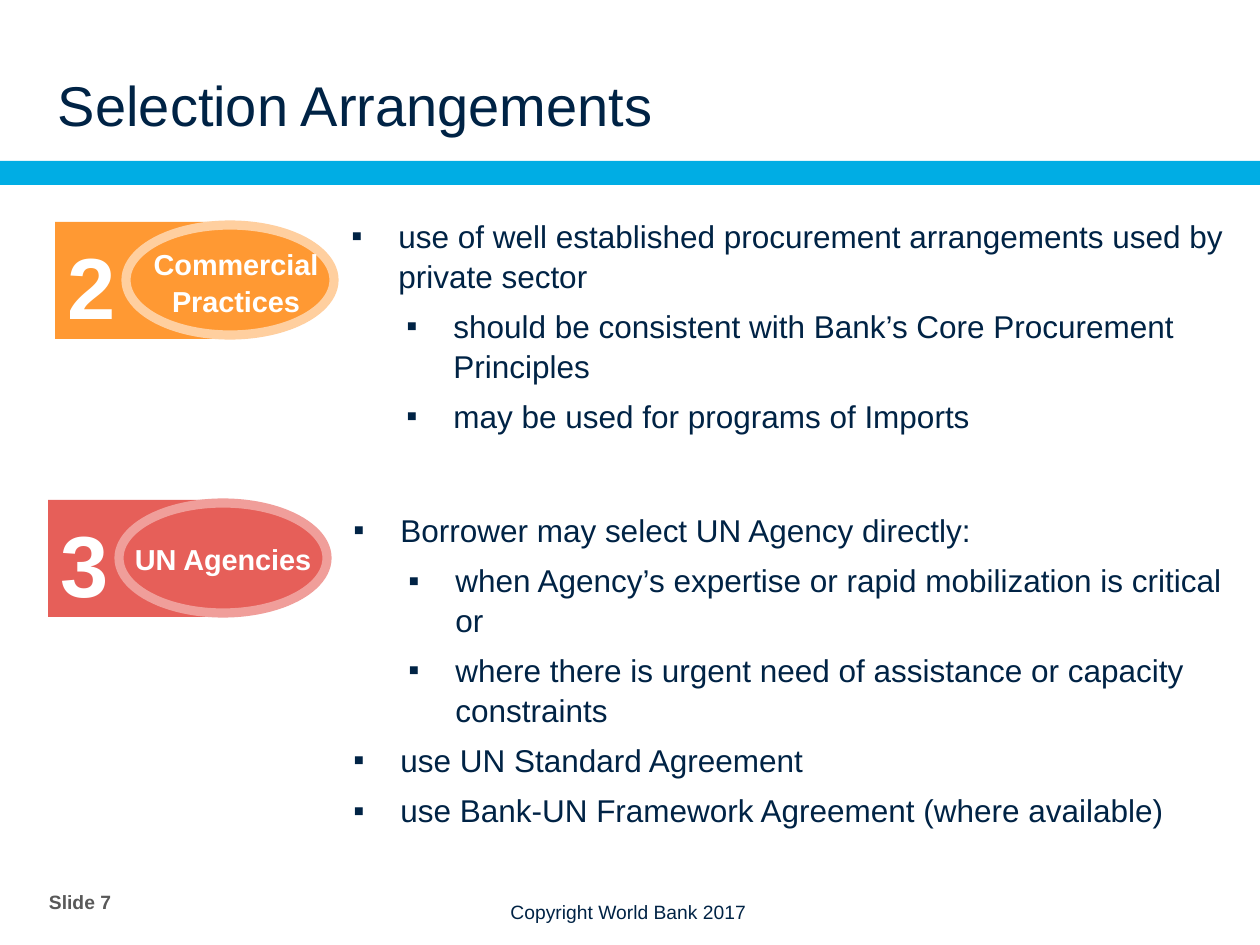
from pptx import Presentation
from pptx.dml.color import RGBColor
from pptx.enum.shapes import MSO_SHAPE as SHAPE
from pptx.enum.text import MSO_ANCHOR as ANCHOR, PP_ALIGN as ALIGN
from pptx.oxml.ns import qn
from pptx.util import Emu, Pt
from lxml import etree

SCALE = 914400 / 126
FONT = "Arial"
NAVY, CYAN, GREY, WHITE = "002345", "00ADE4", "595959", "FFFFFF"
ORANGE, PEACH, RED, PINK = "FF9933", "FFCF9F", "E65F59", "F09E9A"


def px(n):
    return Emu(round(n * SCALE))


def color(value):
    return RGBColor.from_string(value)


def add_run(p, text, size, fill, bold=False):
    p.line_spacing = 1.05
    r = p.add_run()
    r.text = text
    r.font.name, r.font.size, r.font.bold = FONT, Pt(size), bold
    r.font.color.rgb = color(fill)


def add_block(s, kind, box, fill, line=None, width=0):
    sp = s.shapes.add_shape(kind, *map(px, box))
    sp.shadow.inherit = False
    sp.fill.solid()
    sp.fill.fore_color.rgb = color(fill)
    if line:
        sp.line.color.rgb = color(line)
        sp.line.width = Pt(width)
    else:
        sp.line.fill.background()
    return sp


def add_text(s, box, lines, size, fill, bold=False, align=ALIGN.LEFT,
             anchor=ANCHOR.TOP, inset=True, wrap=True):
    tf = s.shapes.add_textbox(*map(px, box)).text_frame
    tf.word_wrap = wrap
    tf.vertical_anchor = anchor
    if not inset:
        tf.margin_left = tf.margin_right = tf.margin_top = tf.margin_bottom = 0
    for i, text in enumerate(lines):
        p = tf.add_paragraph() if i else tf.paragraphs[0]
        p.alignment = align
        add_run(p, text, size, fill, bold)


def add_badge(s, x, y, number, lines, fill, ring, label_dx):
    w, h = 180, 117
    # Number block
    sp = add_block(s, SHAPE.RECTANGLE, (x, y, w, h), fill)
    tf = sp.text_frame
    tf.vertical_anchor = ANCHOR.TOP
    p = tf.paragraphs[0]
    p.alignment = ALIGN.LEFT
    add_run(p, number, 49.5, WHITE, True)
    # Ringed oval and its label
    add_block(s, SHAPE.OVAL, (x + 71, y + 3, 208, 110), fill, ring, 5.25)
    label_h = 13 + 35 * len(lines)
    add_text(s, (x + label_dx, y + (h - label_h) // 2, 220, label_h), lines,
             16.5, WHITE, True, ALIGN.CENTER)


def add_bullets(s, box, items):
    tf = s.shapes.add_textbox(*map(px, box)).text_frame
    tf.word_wrap = True
    for i, (level, text) in enumerate(items):
        p = tf.add_paragraph() if i else tf.paragraphs[0]
        p.level = level
        p.space_after = Pt(6)
        add_run(p, text, 18, NAVY)
        pPr = p._p.get_or_add_pPr()
        pPr.set("marL", str(px(47 + 55 * level)))
        pPr.set("indent", str(px(-47)))
        etree.SubElement(pPr, qn("a:buFont")).set("typeface", FONT)
        etree.SubElement(pPr, qn("a:buChar")).set("char", "▪")


def add_header(s):
    add_text(s, (58, 33, 1166, 105), ["Selection Arrangements"], 32, NAVY,
             anchor=ANCHOR.BOTTOM, inset=False)
    add_block(s, SHAPE.RECTANGLE, (0, 161, 1260, 24), CYAN)


def add_footer(s):
    add_text(s, (49, 876, 87, 50), ["Slide 7"], 11, GREY, True,
             anchor=ANCHOR.MIDDLE, inset=False)
    add_text(s, (498, 893, 268, 37), ["Copyright World Bank 2017"], 11, NAVY,
             wrap=False)


def main():
    prs = Presentation()
    prs.slide_width, prs.slide_height = px(1260), px(945)
    s = prs.slides.add_slide(prs.slide_layouts[6])
    add_header(s)
    add_footer(s)

    # Commercial practices
    add_badge(s, 55, 222, "2", ["Commercial", "Practices"], ORANGE, PEACH, 71)
    add_bullets(s, (339, 209, 905, 224), [
        (0, "use of well established procurement arrangements used by private sector"),
        (1, "should be consistent with Bank’s Core Procurement Principles"),
        (1, "may be used for programs of Imports"),
    ])

    # UN agencies
    add_badge(s, 48, 500, "3", ["UN Agencies"], RED, PINK, 65)
    add_bullets(s, (341, 503, 902, 322), [
        (0, "Borrower may select UN Agency directly:"),
        (1, "when Agency’s expertise or rapid mobilization is critical or"),
        (1, "where there is urgent need of assistance or capacity constraints"),
        (0, "use UN Standard Agreement"),
        (0, "use Bank-UN Framework Agreement (where available)"),
    ])
    prs.save("out.pptx")


if __name__ == "__main__":
    main()
